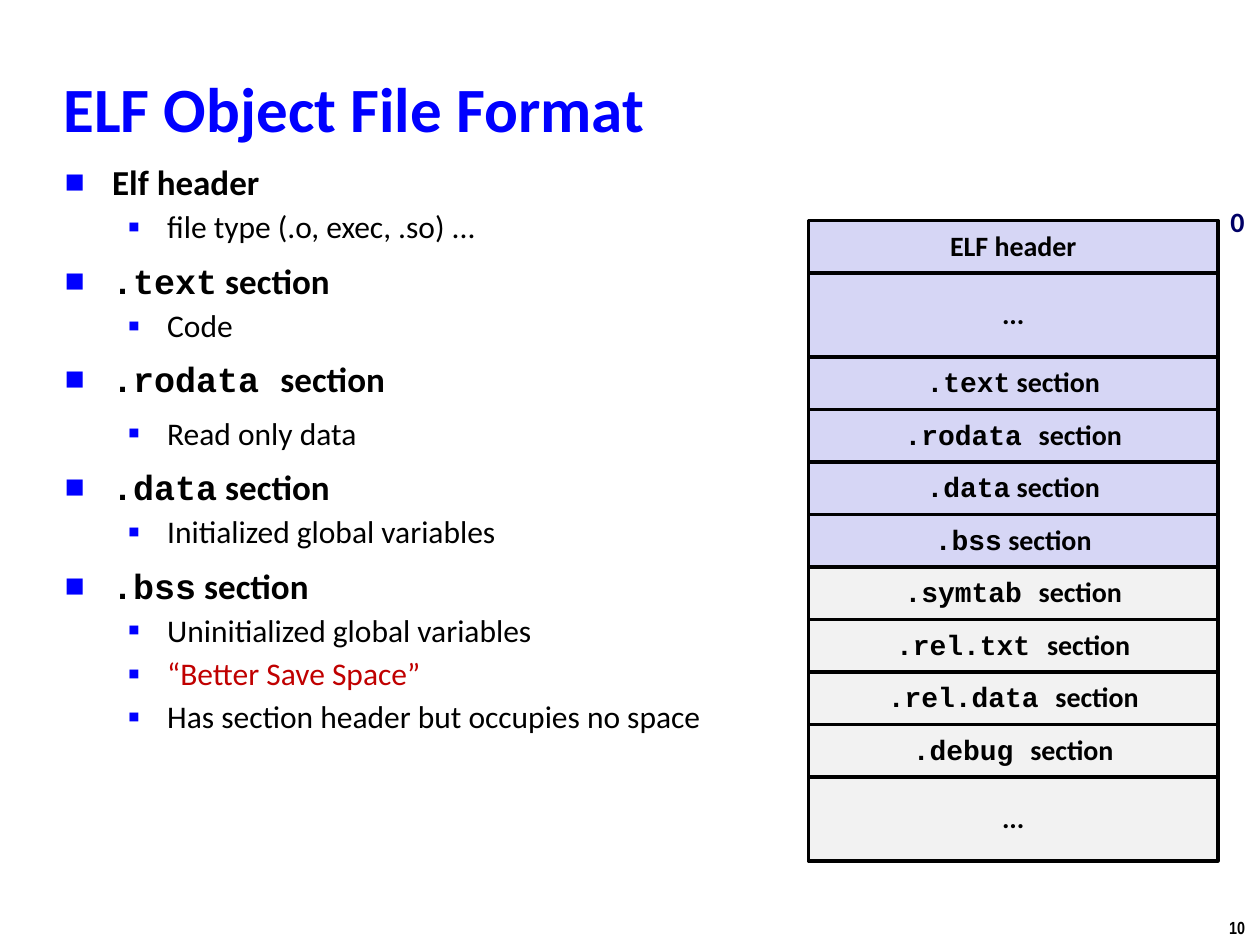
"""Build the ELF object file format slide: section notes beside a file layout diagram."""
import pptx
import pptx.dml.color
import pptx.enum.shapes
import pptx.enum.text
import pptx.oxml
import pptx.oxml.ns
import pptx.util
from dataclasses import dataclass


@dataclass(frozen=True)
class Theme:
    blue: str = "0000FF"
    navy: str = "000066"
    black: str = "000000"
    red: str = "C00000"
    lavender: str = "D6D6F5"
    grey: str = "F2F2F2"
    prose: str = "Calibri"
    code: str = "Courier New"
    narrow: str = "Arial Narrow"
    title: int = 36
    heading: int = 20
    item: int = 18
    label: int = 16
    number: int = 10


theme = Theme()
PX = 9525


def add_text(p, text, size, color, font=theme.prose, bold=True):
    r = p.add_run()
    r.text = text
    r.font.name = font
    r.font.size = pptx.util.Pt(size)
    r.font.bold = bold
    r.font.color.rgb = pptx.dml.color.RGBColor.from_string(color)


def add_box(left, top, width, height, wrap=False):
    sp = s.shapes.add_textbox(left * PX, top * PX, width * PX, height * PX)
    sp.text_frame.word_wrap = wrap
    return sp.text_frame


prs = pptx.Presentation()
prs.slide_width = 960 * PX
prs.slide_height = 720 * PX
s = prs.slides.add_slide(prs.slide_layouts[6])

tf = add_box(927, 694, 33, 26)
add_text(tf.paragraphs[0], "10", theme.number, theme.black, theme.narrow)

tf = add_box(39, 40, 915, 83, wrap=True)
tf.vertical_anchor = pptx.enum.text.MSO_ANCHOR.MIDDLE
add_text(tf.paragraphs[0], "ELF Object File Format", theme.title, theme.blue)

notes = [
    ("", "Elf header", 0.83, ["file type (.o, exec, .so) ..."]),
    (".text", " section", 0.8, ["Code"]),
    (".rodata ", "section", 0.8, ["Read only data"]),
    (".data", " section", 0.8, ["Initialized global variables"]),
    (".bss", " section", 0.8, [
        "Uninitialized global variables",
        "“Better Save Space”",
        "Has section header but occupies no space",
    ]),
]
lines = []
for code, prose, spacing, items in notes:
    lines.append((0, code, prose, spacing, 12.5))
    for item in items:
        loose = item == "Read only data"
        lines.append((1, "", item, 0.8 if loose else 0.88, 12.5 if loose else 5.6))

bullets = [(36, -36, 60, "■"), (78, -30, 110, "▪")]
tf = add_box(40, 123, 562, 549, wrap=True)
for i, (level, code, prose, spacing, before) in enumerate(lines):
    p = tf.paragraphs[0] if i == 0 else tf.add_paragraph()
    p.level = level
    p.line_spacing = spacing
    p.space_before = pptx.util.Pt(before)
    margin, indent, percent, mark = bullets[level]
    pPr = p._p.get_or_add_pPr()
    pPr.set("marL", str(margin * PX))
    pPr.set("indent", str(indent * PX))
    ns = pptx.oxml.ns.nsdecls("a")
    for xml in (
        f'<a:buClr {ns}><a:srgbClr val="{theme.blue}"/></a:buClr>',
        f'<a:buSzPct {ns} val="{percent * 1000}"/>',
        f'<a:buFont {ns} typeface="{theme.prose}"/>',
        f'<a:buChar {ns} char="{mark}"/>',
    ):
        pPr.append(pptx.oxml.parse_xml(xml))
    size = theme.item if level else theme.heading
    color = theme.red if prose.startswith("“") else theme.black
    if code:
        add_text(p, code, size, color, theme.code)
    add_text(p, prose, size, color, bold=level == 0)

layout = [
    ("", "ELF header", 40, theme.lavender),
    ("", "...", 64, theme.lavender),
    (".text", " section", 40, theme.lavender),
    (".rodata ", "section", 40, theme.lavender),
    (".data", " section", 40, theme.lavender),
    (".bss", " section", 40, theme.lavender),
    (".symtab ", "section", 40, theme.grey),
    (".rel.txt ", "section", 40, theme.grey),
    (".rel.data ", "section", 40, theme.grey),
    (".debug ", "section", 40, theme.grey),
    ("", "...", 64, theme.grey),
]
top = 168
for code, prose, height, fill in layout:
    sp = s.shapes.add_shape(pptx.enum.shapes.MSO_SHAPE.RECTANGLE,
                            616 * PX, top * PX, 312 * PX, height * PX)
    sp.shadow.inherit = False
    sp.fill.solid()
    sp.fill.fore_color.rgb = pptx.dml.color.RGBColor.from_string(fill)
    sp.line.color.rgb = pptx.dml.color.RGBColor.from_string(theme.black)
    sp.line.width = pptx.util.Pt(2)
    tf = sp.text_frame
    tf.word_wrap = False
    tf.vertical_anchor = pptx.enum.text.MSO_ANCHOR.MIDDLE
    p = tf.paragraphs[0]
    p.alignment = pptx.enum.text.PP_ALIGN.CENTER
    p.line_spacing = 0.94 if code else 0.98
    if code:
        add_text(p, code, theme.label, theme.black, theme.code)
    add_text(p, prose, theme.label, theme.black)
    top += height

tf = add_box(928, 152, 30, 35)
tf.paragraphs[0].line_spacing = 0.98
add_text(tf.paragraphs[0], "0", theme.label, theme.navy)

prs.save("out.pptx")
